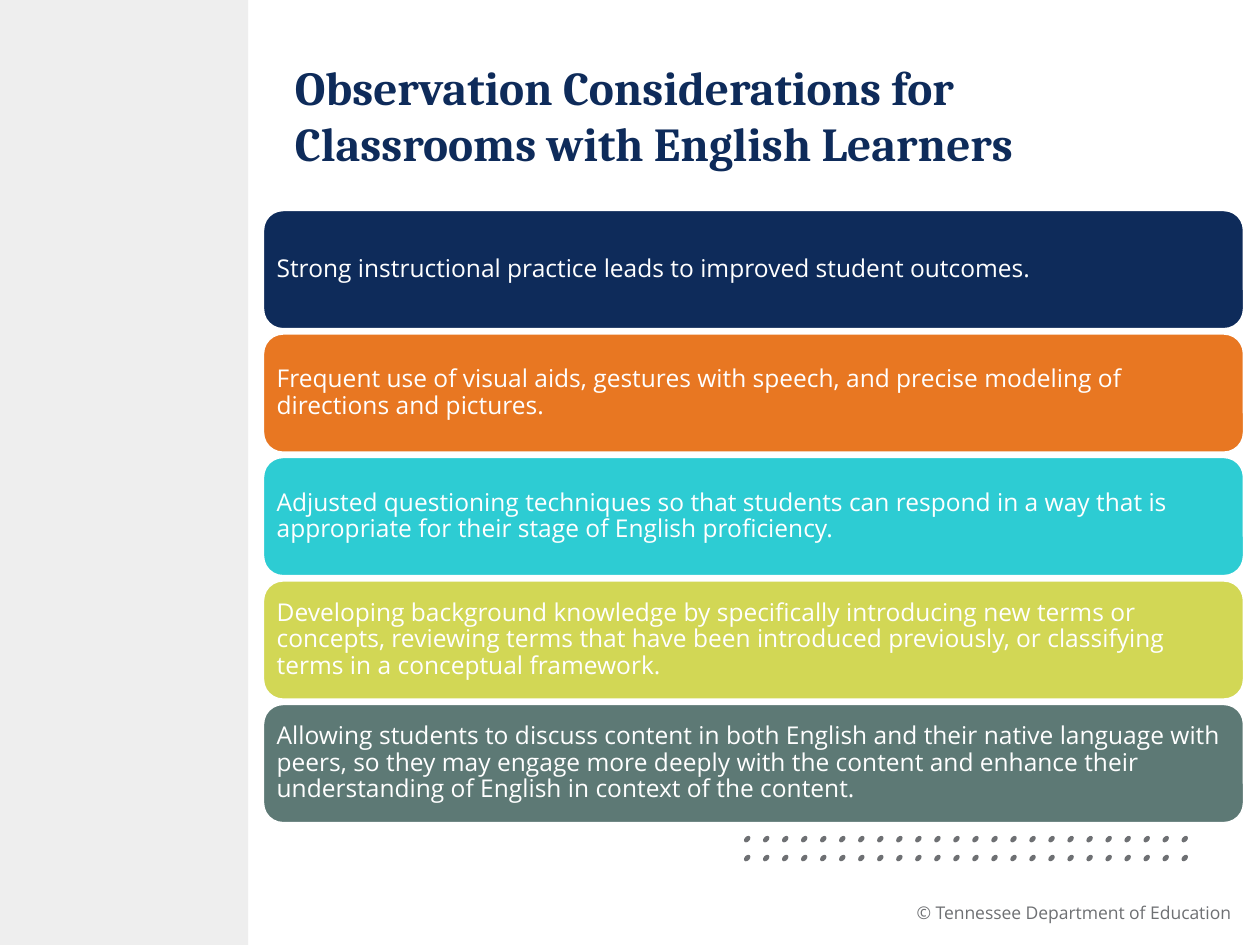
from dataclasses import dataclass

from pptx import Presentation
from pptx.dml.color import RGBColor
from pptx.enum.shapes import MSO_SHAPE
from pptx.enum.text import MSO_ANCHOR, MSO_AUTO_SIZE, PP_ALIGN
from pptx.util import Inches, Pt

RECT, ROUND, OVAL = MSO_SHAPE.RECTANGLE, MSO_SHAPE.ROUNDED_RECTANGLE, MSO_SHAPE.OVAL
LEFT, RIGHT = PP_ALIGN.LEFT, PP_ALIGN.RIGHT
MIDDLE, NO_FIT = MSO_ANCHOR.MIDDLE, MSO_AUTO_SIZE.NONE


@dataclass(frozen=True)
class Theme:
    navy: str = "0E2B5A"
    orange: str = "E87722"
    teal: str = "2DCCD3"
    lime: str = "D2D755"
    sage: str = "5D7975"
    white: str = "FFFFFF"
    gray: str = "6E7073"
    pale: str = "EEEEEE"
    head: str = "Cambria"
    body: str = "Open Sans"
    title: int = 27
    text: int = 14
    note: int = 10


theme = Theme()


def add_box(kind, x, y, w, h, fill):
    """Add a filled shape without line or shadow; lengths in inches."""
    box = slide.shapes.add_shape(kind, Inches(x), Inches(y), Inches(w), Inches(h))
    box.shadow.inherit = False
    box.fill.solid()
    box.fill.fore_color.rgb = RGBColor.from_string(fill)
    box.line.fill.background()
    return box


def add_run(para, text, face, size, color, bold=False):
    run = para.add_run()
    run.text = text
    run.font.name = face
    run.font.size = Pt(size)
    run.font.bold = bold
    run.font.color.rgb = RGBColor.from_string(color)


deck = Presentation()
deck.slide_width, deck.slide_height = Inches(10), Inches(7.5)
slide = deck.slides.add_slide(deck.slide_layouts[5])

# Side band and dot pattern
add_box(RECT, 0, 0, 1.97, 7.5, theme.pale)
for row in range(2):
    for col in range(24):
        dot = add_box(OVAL, 5.9 + col * 0.151, 6.64 + row * 0.15, 0.06, 0.04, theme.gray)
        dot.rotation = 314.4

# Title
title = slide.shapes.title
title.left, title.top = Inches(2.24), Inches(0.25)
title.width, title.height = Inches(7.37), Inches(1.32)
frame = title.text_frame
frame.auto_size = NO_FIT
frame.vertical_anchor = MIDDLE
para = frame.paragraphs[0]
para.alignment = LEFT
add_run(para, "Observation Considerations for Classrooms with English Learners",
        theme.head, theme.title, theme.navy, True)

# Stack of practice bars
bars = [
    (theme.navy, "Strong instructional practice leads to improved student outcomes."),
    (theme.orange, "Frequent use of visual aids, gestures with speech, and precise "
                   "modeling of directions and pictures."),
    (theme.teal, "Adjusted questioning techniques so that students can respond in a way "
                 "that is appropriate for their stage of English proficiency."),
    (theme.lime, "Developing background knowledge by specifically introducing new terms or "
                 "concepts, reviewing terms that have been introduced previously, or "
                 "classifying terms in a conceptual framework."),
    (theme.sage, "Allowing students to discuss content in both English and their native "
                 "language with peers, so they may engage more deeply with the content and "
                 "enhance their understanding of English in context of the content."),
]
for i, (fill, text) in enumerate(bars):
    bar = add_box(ROUND, 2.09, 1.67 + i * 0.98, 7.78, 0.94, fill)
    bar.line.color.rgb = RGBColor.from_string(theme.white)
    bar.line.width = Pt(1)
    frame = bar.text_frame
    frame.word_wrap = True
    frame.vertical_anchor = MIDDLE
    frame.margin_left = frame.margin_right = Inches(0.06)
    frame.margin_top = frame.margin_bottom = Inches(0.06)
    para = frame.paragraphs[0]
    para.alignment = LEFT
    para.line_spacing = 0.9
    add_run(para, text, theme.body, theme.text, theme.white)

# Copyright line
note = slide.shapes.add_textbox(Inches(6.77), Inches(7.13), Inches(3.13), Inches(0.25))
frame = note.text_frame
frame.word_wrap = True
frame.margin_right = Inches(0.13)
para = frame.paragraphs[0]
para.alignment = RIGHT
para.line_spacing = 0.9
add_run(para, "© Tennessee Department of Education", theme.body, theme.note, theme.gray)

deck.save("out.pptx")
